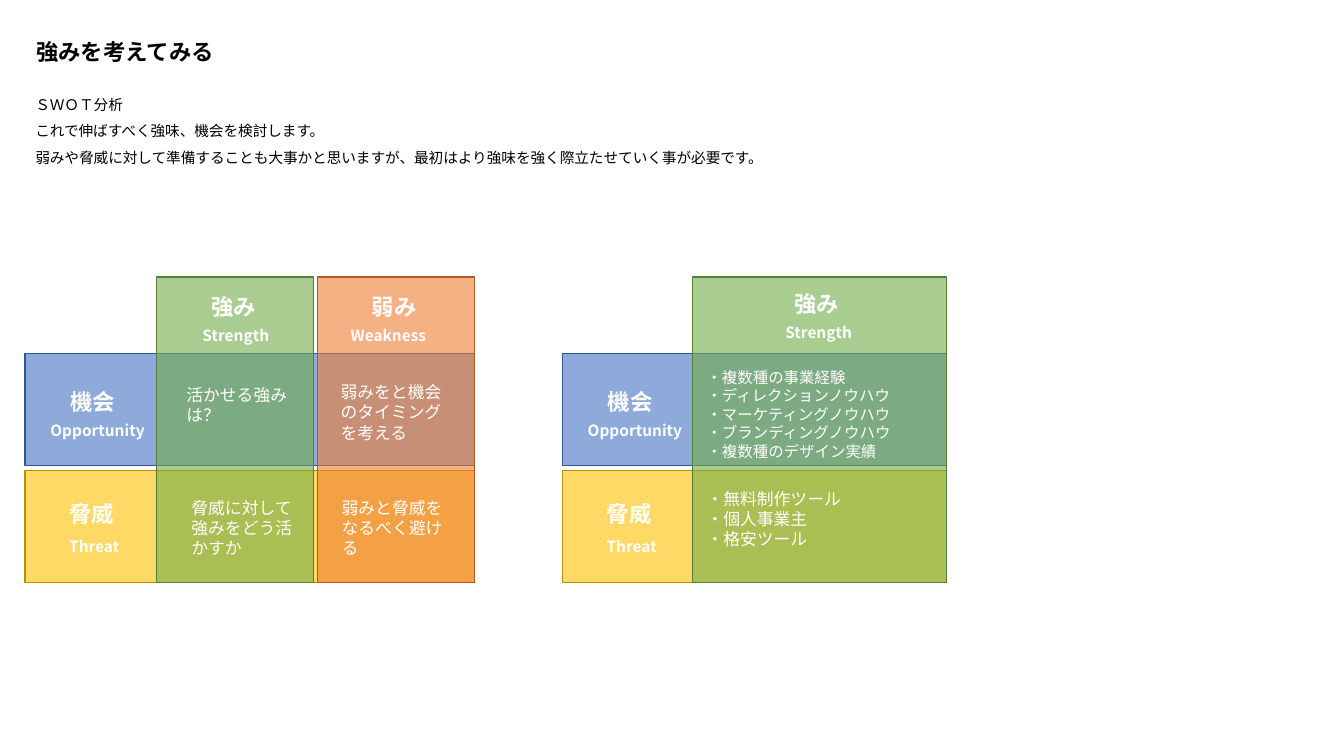
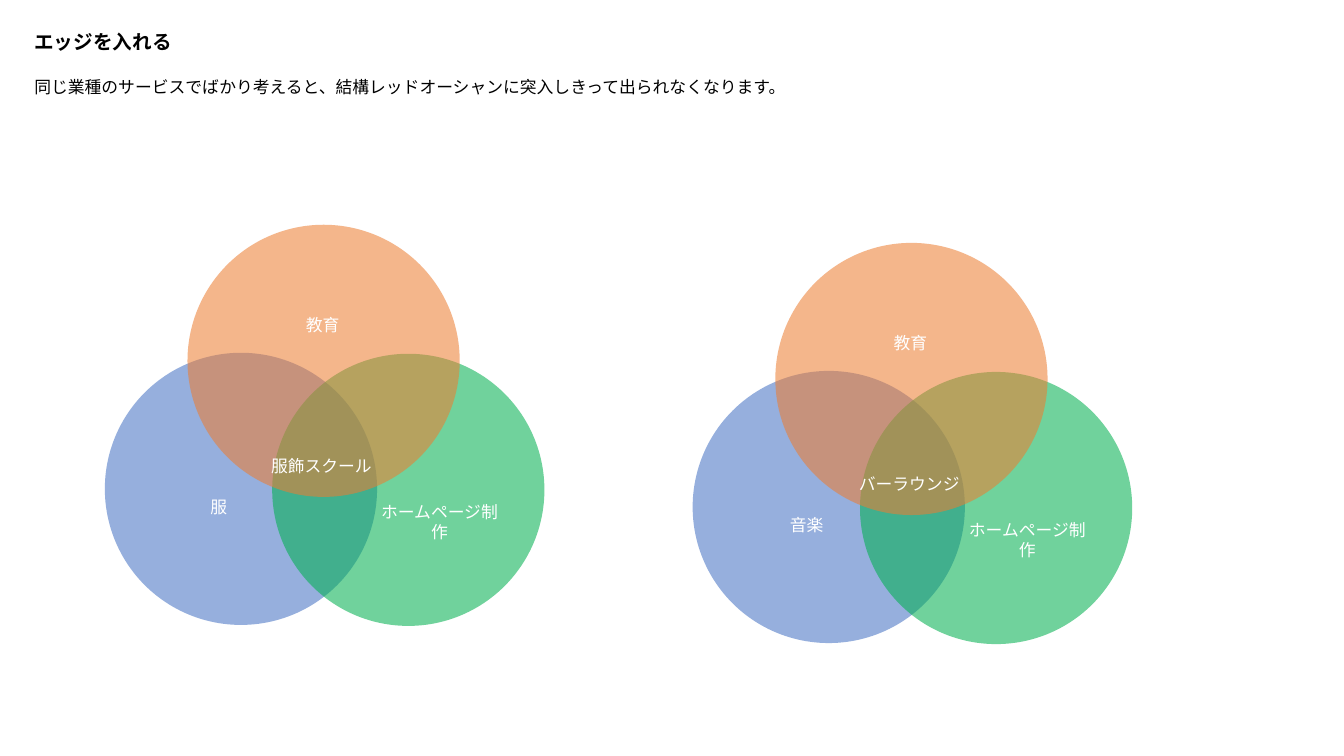
"""Build two slides on strengths: a SWOT analysis and overlapping fields."""
from dataclasses import dataclass

from lxml.etree import SubElement
from pptx import Presentation
from pptx.dml.color import RGBColor
from pptx.enum.shapes import MSO_SHAPE as Preset
from pptx.enum.text import MSO_ANCHOR as Anchor, MSO_AUTO_SIZE as AutoSize, PP_ALIGN as Align
from pptx.oxml.ns import qn
from pptx.util import Pt

EMU_PER_PX = 9144
FONT = "Noto Sans CJK JP"
COLOURS = {
    "black": "000000", "white": "FFFFFF",
    "blue": "4472C4", "blue_line": "325491",
    "yellow": "FFC000", "yellow_line": "BD8E00",
    "green": "70AD47", "green_line": "538035",
    "orange": "ED7D31", "orange_line": "AF5C24",
    "emerald": "00B050",
}
ROW_HEIGHT, COLUMN_TOP, COLUMN_HEIGHT = 111, 275, 303
CIRCLE_SIZE = 270


@dataclass(frozen=True)
class Box:
    """A rectangle in px."""
    left: int
    top: int
    width: int
    height: int

    def emu(self) -> list[int]:
        """Return the four lengths in EMU."""
        return [value * EMU_PER_PX for value in (self.left, self.top, self.width, self.height)]

    def moved(self, right: int, down: int) -> "Box":
        """Return the box shifted by an offset."""
        return Box(self.left + right, self.top + down, self.width, self.height)


@dataclass(frozen=True)
class Style:
    """The look of a text."""
    size: float = 12
    colour: str = "white"
    bold: bool = False
    align: Align = Align.LEFT
    spacing: float = 1.0


@dataclass(frozen=True)
class Label:
    """A text and its place."""
    text: str
    box: Box
    style: Style = Style()


@dataclass(frozen=True)
class Row:
    """A horizontal band of the matrix with labels relative to its left edge."""
    top: int
    colour: str
    labels: tuple[Label, ...]


@dataclass(frozen=True)
class Column:
    """A vertical band of the matrix with its heading and cells."""
    left: int
    width: int
    colour: str
    labels: tuple[Label, ...]


@dataclass(frozen=True)
class Matrix:
    """A matrix with shared rows and its own columns."""
    left: int
    width: int
    columns: tuple[Column, ...]


@dataclass(frozen=True)
class Venn:
    """A group of three circles, placed relative to the first group."""
    right: int
    down: int
    field: str
    overlap: str


HEADING = Style(16, bold=True)
SUBHEADING = Style(11, bold=True)
SUBHEADING_CENTRED = Style(11, bold=True, align=Align.CENTER)
CENTRED = Style(align=Align.CENTER)
ROWS = (
    Row(351, "blue", (
        Label("機会", Box(35, 380, 71, 37), HEADING),
        Label("Opportunity", Box(15, 413, 115, 29), SUBHEADING))),
    Row(467, "yellow", (
        Label("脅威", Box(34, 491, 71, 37), HEADING),
        Label("Threat", Box(11, 528, 115, 29), SUBHEADING_CENTRED))),
)
MATRICES = (
    Matrix(25, 446, (
        Column(155, 156, "green", (
            Label("強み", Box(200, 286, 71, 37), HEADING),
            Label("Strength", Box(191, 319, 88, 29), SUBHEADING),
            Label("活かせる強みは？", Box(175, 377, 125, 50)),
            Label("脅威に対して\n強みをどう活かすか", Box(180, 489, 125, 71)))),
        Column(315, 156, "orange", (
            Label("弱み", Box(359, 286, 71, 37), HEADING),
            Label("Weakness", Box(338, 319, 100, 29), SUBHEADING),
            Label("弱みをと機会のタイミングを考える", Box(328, 374, 125, 71)),
            Label("弱みと脅威を\nなるべく避ける", Box(329, 489, 125, 71)))))),
    Matrix(558, 381, (
        Column(687, 252, "green", (
            Label("強み", Box(778, 283, 71, 37), HEADING),
            Label("Strength", Box(769, 316, 88, 29), SUBHEADING),
            Label("・複数種の事業経験\n・ディレクションノウハウ\n・マーケティングノウハウ\n"
                  "・ブランディングノウハウ\n・複数種のデザイン実績",
                  Box(691, 360, 237, 103), Style(11)),
            Label("・無料制作ツール\n・個人事業主\n・格安ツール", Box(691, 480, 200, 71)))),)),
)
VENNS = (Venn(0, 0, "服", "服飾スクール"), Venn(583, 18, "音楽", "バーラウンジ"))


def rgb(name: str) -> RGBColor:
    """Look up a named colour."""
    return RGBColor.from_string(COLOURS[name])


def write_text(shape, text: str, style: Style) -> None:
    """Fill a text shape and format its runs."""
    frame = shape.text_frame
    frame.text = text
    frame.word_wrap = True
    frame.auto_size = AutoSize.NONE
    frame.vertical_anchor = Anchor.TOP
    for paragraph in frame.paragraphs:
        paragraph.alignment = style.align
        paragraph.line_spacing = style.spacing
        paragraph.space_before = Pt(0)
        for run in paragraph.runs:
            run.font.size = Pt(style.size)
            run.font.bold = style.bold
            run.font.color.rgb = rgb(style.colour)
            run.font.name = FONT
            SubElement(run.font._element, qn("a:ea"), typeface=FONT)


def fill_placeholder(shape, label: Label) -> None:
    """Place a title or body placeholder and write its text without bullets."""
    shape.left, shape.top, shape.width, shape.height = label.box.emu()
    write_text(shape, label.text, label.style)
    for paragraph in shape.text_frame.paragraphs:
        properties = paragraph._p.get_or_add_pPr()
        properties.set("marL", "0")
        properties.set("indent", "0")
        SubElement(properties, qn("a:buNone"))


def add_slide(presentation, title: Label, body: Label):
    """Add a slide with a title and a body text."""
    slide = presentation.slides.add_slide(presentation.slide_layouts[1])
    fill_placeholder(slide.shapes.title, title)
    fill_placeholder(slide.placeholders[1], body)
    return slide


def add_label(slide, label: Label, right: int = 0, down: int = 0) -> None:
    """Add a text box, shifted by an offset."""
    write_text(slide.shapes.add_textbox(*label.box.moved(right, down).emu()),
               label.text, label.style)


def add_area(slide, preset: Preset, box: Box, colour: str, opacity: int,
             outlined: bool = False) -> None:
    """Add a translucent shape, with or without an outline."""
    shape = slide.shapes.add_shape(preset, *box.emu())
    shape.shadow.inherit = False
    shape.fill.solid()
    shape.fill.fore_color.rgb = rgb(colour)
    fill_colour = shape._element.spPr.find(qn("a:solidFill"))[0]
    SubElement(fill_colour, qn("a:alpha"), val=str(opacity * 1000))
    if outlined:
        shape.line.color.rgb = rgb(f"{colour}_line")
        shape.line.width = Pt(1)
    else:
        shape.line.fill.background()


def add_matrix(slide, matrix: Matrix) -> None:
    """Draw the crossing bands of a matrix, then their texts."""
    for row in ROWS:
        add_area(slide, Preset.RECTANGLE, Box(matrix.left, row.top, matrix.width, ROW_HEIGHT),
                 row.colour, 60, outlined=True)
    for column in matrix.columns:
        add_area(slide, Preset.RECTANGLE,
                 Box(column.left, COLUMN_TOP, column.width, COLUMN_HEIGHT),
                 column.colour, 60, outlined=True)
    for row in ROWS:
        for label in row.labels:
            add_label(slide, label, right=matrix.left)
    for column in matrix.columns:
        for label in column.labels:
            add_label(slide, label)


def add_venn(slide, venn: Venn) -> None:
    """Draw three overlapping circles and their texts."""
    for left, top, colour in ((104, 350, "blue"), (270, 351, "emerald"), (186, 223, "orange")):
        box = Box(left, top, CIRCLE_SIZE, CIRCLE_SIZE)
        add_area(slide, Preset.OVAL, box.moved(venn.right, venn.down), colour, 56)
    for label in (
        Label(venn.field, Box(149, 488, 136, 30), CENTRED),
        Label("ホームページ制作", Box(368, 493, 136, 50), CENTRED),
        Label(venn.overlap, Box(259, 447, 124, 30)),
        Label("教育", Box(252, 307, 136, 30), CENTRED),
    ):
        add_label(slide, label, venn.right, venn.down)


def main() -> None:
    """Build and save the presentation."""
    presentation = Presentation()
    presentation.slide_width = 1333 * EMU_PER_PX
    presentation.slide_height = 750 * EMU_PER_PX

    swot = add_slide(
        presentation,
        Label("強みを考えてみる", Box(26, 33, 255, 37), Style(16, "black", True)),
        Label("ＳＷＯＴ分析\nこれで伸ばすべく強味、機会を検討します。\n"
              "弱みや脅威に対して準備することも大事かと思いますが、"
              "最初はより強味を強く際立たせていく事が必要です。",
              Box(25, 81, 1057, 87), Style(10.5, "black", spacing=1.5)))
    for matrix in MATRICES:
        add_matrix(swot, matrix)

    edge = add_slide(
        presentation,
        Label("エッジを入れる", Box(24, 25, 348, 34), Style(14, "black", True)),
        Label("同じ業種のサービスでばかり考えると、"
              "結構レッドオーシャンに突入しきって出られなくなります。",
              Box(24, 71, 890, 30), Style(12, "black")))
    for venn in VENNS:
        add_venn(edge, venn)

    presentation.save("out.pptx")


if __name__ == "__main__":
    main()
